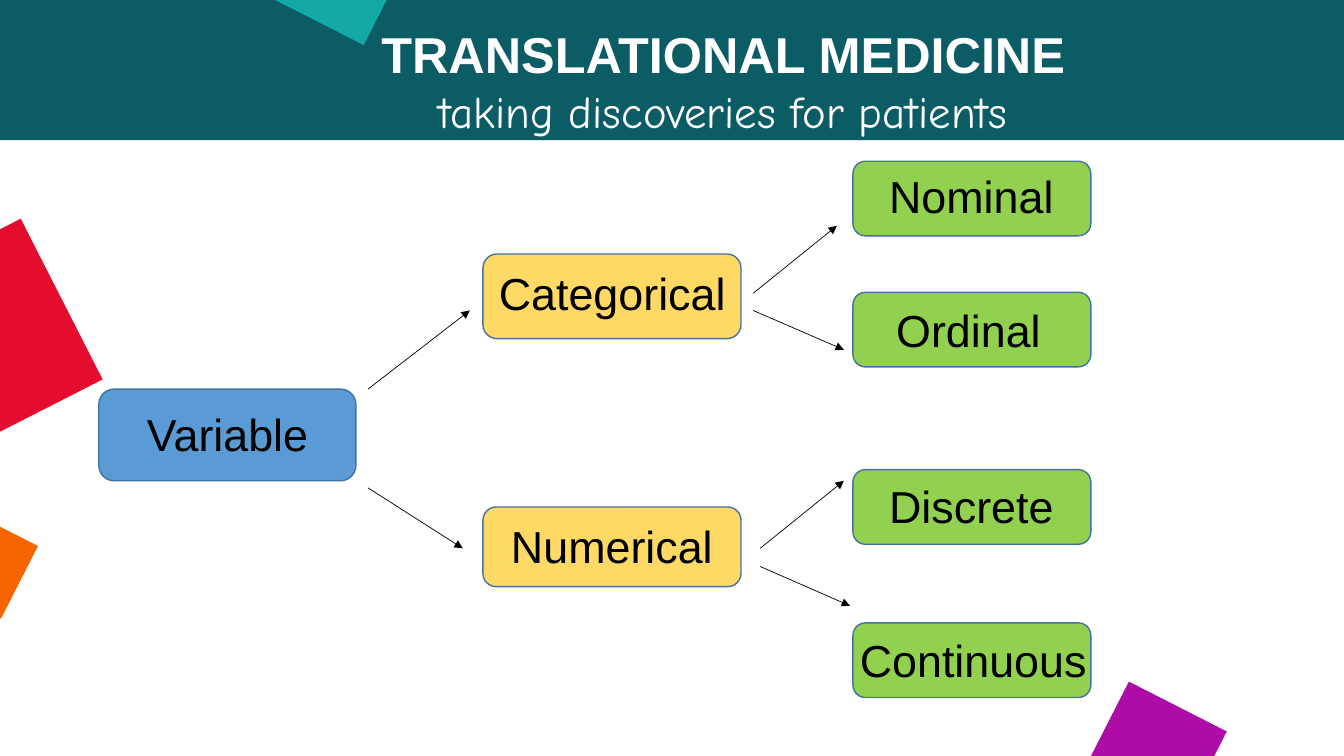
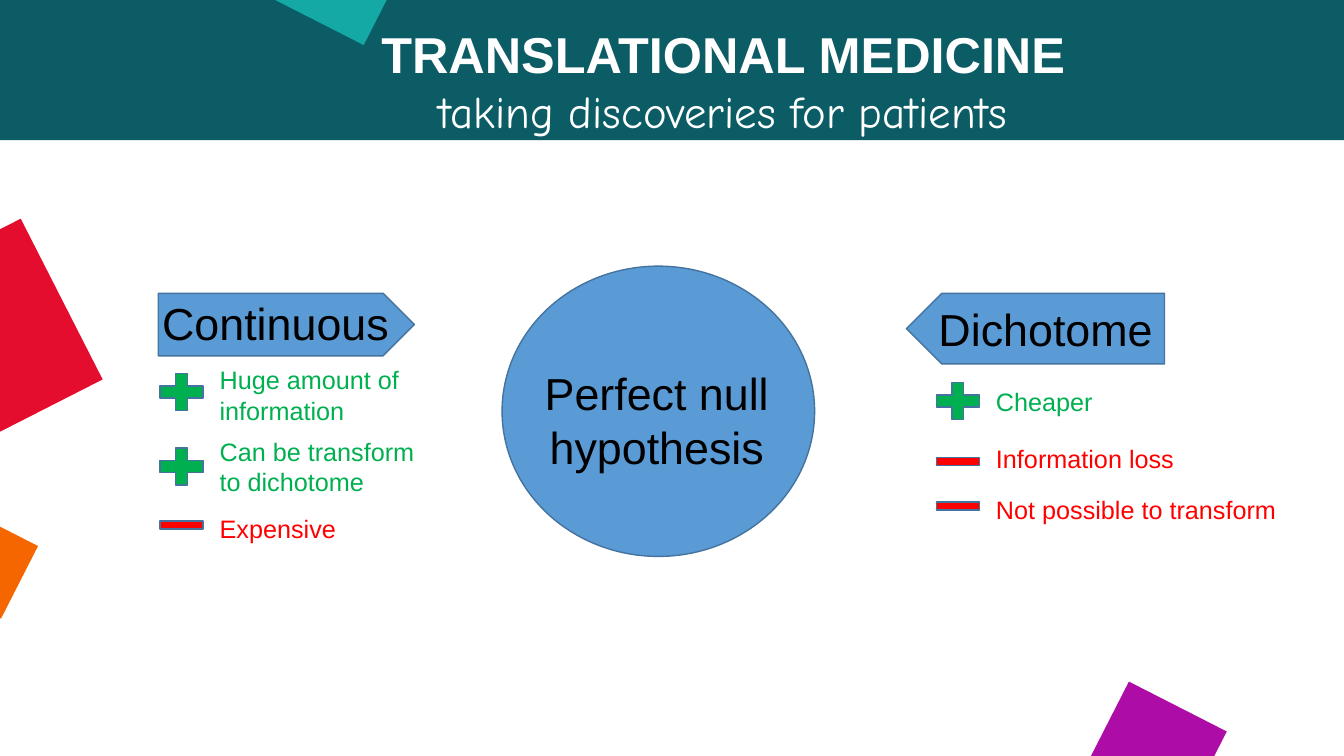
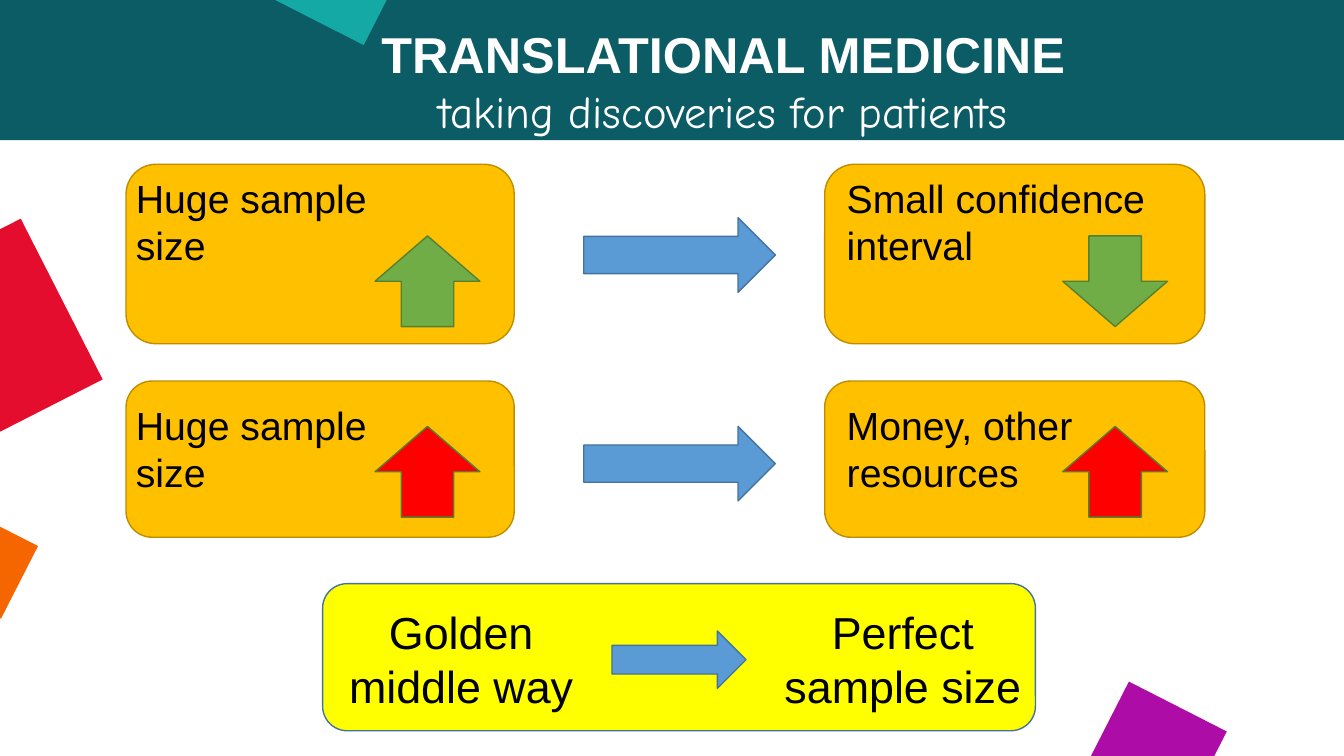
"""Build three slides on variables, hypotheses and sample size."""
from pptx import Presentation
from pptx.dml.color import RGBColor as Rgb
from pptx.enum.shapes import MSO_CONNECTOR as Link, MSO_SHAPE as Kind
from pptx.enum.text import PP_ALIGN as Align
from pptx.oxml.ns import qn
from pptx.util import Inches, Pt
from lxml.etree import SubElement

HUES = {
    "teal": "0C5C65", "aqua": "15A9A6", "crimson": "E50D2E", "purple": "AD0DA6",
    "orange": "F56600", "blue": "5B9BD5", "navy": "43739E", "sand": "FFD966",
    "lime": "92D050", "gold": "FFC000", "bronze": "BD8E00", "leaf": "70AD47",
    "moss": "538035", "yellow": "FFFF00", "red": "FF0000", "green": "00B050",
    "black": "000000", "white": "FFFFFF",
}
HUES = {name: Rgb.from_string(code) for name, code in HUES.items()}


def draw(page, kind, box, fill, edge="navy", turn=0):
    shape = page.shapes.add_shape(kind, *map(Inches, box))
    shape.shadow.inherit = False
    shape.rotation = turn
    shape.fill.solid()
    shape.fill.fore_color.rgb = HUES[fill]
    if edge:
        shape.line.color.rgb = HUES[edge]
        shape.line.width = Pt(1)
    else:
        shape.line.fill.background()
    return shape


def write(page, box, lines, hue="black", align=Align.LEFT, **style):
    frame = page.shapes.add_textbox(*map(Inches, box)).text_frame
    frame.word_wrap = True
    for i, (words, extra) in enumerate(lines):
        para = frame.add_paragraph() if i else frame.paragraphs[0]
        para.alignment = align
        run = para.add_run()
        run.text = words
        font = {"name": "Arial", "size": Pt(32), "bold": False, **style, **extra}
        for key, value in font.items():
            setattr(run.font, key, value)
        run.font.color.rgb = HUES[hue]


deck = Presentation()
deck.slide_width, deck.slide_height = Inches(13.33), Inches(7.5)
layout = deck.slide_layouts[6]
for holder in list(layout.placeholders):
    holder.element.getparent().remove(holder.element)
pages = [deck.slides.add_slide(layout) for _ in range(3)]
tree, marks, sample = pages

for box, fill, turn in [
    ((0, 0, 13.33, 1.39), "teal", 0),
    ((-1.09, 2.48, 1.8, 1.79), "crimson", 333),
    ((10.89, 6.95, 1.09, 1.09), "purple", 27),
    ((-0.61, 5.18, 0.85, 0.81), "orange", 27),
    ((2.91, -0.73, 0.98, 1.01), "aqua", 27),
]:
    layout.shapes.element.append(draw(tree, Kind.RECTANGLE, box, fill, None, turn).element)

for page in pages:
    write(page, (3.67, 0.18, 7.01, 1.2), [
        ("TRANSLATIONAL MEDICINE", {"size": Pt(36), "bold": True}),
        ("taking discoveries for patients", {"name": "Comic Neue"}),
    ], "white", Align.CENTER)

for words, box, fill, left, top, width in [
    ("Variable", (0.98, 3.86, 2.55, 0.91), "blue", 1.36, 3.99, 2.33),
    ("Categorical", (4.79, 2.52, 2.56, 0.84), "sand", 4.85, 2.59, 2.5),
    ("Numerical", (4.79, 5.03, 2.56, 0.79), "sand", 4.97, 5.1, 2.3),
    ("Nominal", (8.46, 1.6, 2.36, 0.74), "lime", 8.72, 1.62, 2.19),
    ("Ordinal", (8.46, 2.9, 2.36, 0.74), "lime", 8.79, 2.95, 2.19),
    ("Discrete", (8.46, 4.66, 2.36, 0.74), "lime", 8.72, 4.7, 2.19),
    ("Continuous", (8.46, 6.18, 2.36, 0.74), "lime", 8.43, 6.23, 2.5),
]:
    draw(tree, Kind.ROUNDED_RECTANGLE, box, fill)
    write(tree, (left, top, width, 0.64), [(words, {})])

for ends in [
    (3.65, 3.86, 4.66, 3.08), (3.65, 4.84, 4.59, 5.44),
    (7.47, 2.91, 8.3, 2.24), (7.47, 3.08, 8.37, 3.47),
    (7.54, 5.44, 8.37, 4.77), (7.54, 5.62, 8.43, 6.01),
]:
    line = tree.shapes.add_connector(Link.STRAIGHT, *map(Inches, ends))
    line.line.color.rgb = HUES["black"]
    line.line.width = Pt(0.5)
    SubElement(line.line._get_or_add_ln(), qn("a:tailEnd"), type="triangle")
    SubElement(line.element.spPr, qn("a:effectLst"))

draw(marks, Kind.PENTAGON, (1.57, 2.91, 2.54, 0.62), "blue")
draw(marks, Kind.PENTAGON, (8.99, 2.91, 2.56, 0.7), "blue", turn=180)
draw(marks, Kind.OVAL, (4.98, 2.64, 3.1, 2.88), "blue")
write(marks, (1.51, 2.88, 2.5, 0.64), [("Continuous", {})])
write(marks, (9.21, 2.94, 2.5, 0.64), [("Dichotome", {})])
write(marks, (5.09, 3.58, 2.85, 1.18), [("Perfect null hypothesis", {})], align=Align.CENTER)

PLUS = (Kind.MATH_PLUS, 0.5, "green")
MINUS = (Kind.MATH_MINUS, 0.34, "red")
for (kind, height, hue), left, top, base, width, words in [
    (PLUS, 1.51, 3.64, 3.57, 2.24, "Huge amount of information"),
    (PLUS, 1.51, 4.38, 4.28, 2.24, "Can be transform to dichotome"),
    (MINUS, 1.51, 5.04, 5.04, 2.35, "Expensive"),
    (PLUS, 9.21, 3.73, 3.78, 2.24, "Cheaper"),
    (MINUS, 9.21, 4.41, 4.35, 2.39, "Information loss"),
    (MINUS, 9.21, 4.85, 4.85, 3.06, "Not possible to transform"),
]:
    draw(marks, kind, (left, top, 0.58, height), hue)
    write(marks, (left + 0.57, base, width, 0.4), [(words, {})], hue, size=Pt(18))

for top, height, base, mid, rise, hue, effect, turn in [
    (1.63, 1.78, 1.68, 2.16, 2.34, "leaf", "Small confidence interval", 0),
    (3.78, 1.55, 3.93, 4.23, 4.23, "red", "Money, other resources", 180),
]:
    for left, width, inset, span, tip, words, spin in [
        (1.25, 3.85, 1.25, 2.54, 3.72, "Huge sample size", 180),
        (8.18, 3.77, 8.3, 3.4, 10.54, effect, turn),
    ]:
        draw(sample, Kind.ROUNDED_RECTANGLE, (left, top, width, height), "gold", "bronze")
        draw(sample, Kind.DOWN_ARROW, (tip, rise, 1.04, 0.9), hue, "moss", spin)
        write(sample, (inset, base, span, 1.04), [(words, {})], size=Pt(28))
    draw(sample, Kind.RIGHT_ARROW, (5.79, mid, 1.9, 0.74), "blue")

draw(sample, Kind.ROUNDED_RECTANGLE, (3.2, 5.79, 7.07, 1.46), "yellow")
draw(sample, Kind.RIGHT_ARROW, (6.07, 6.26, 1.33, 0.57), "blue")
for left, width, words in [(3.36, 2.43, "Golden middle way"), (7.48, 2.95, "Perfect sample size")]:
    write(sample, (left, 5.95, width, 1.18), [(words, {})], align=Align.CENTER)

deck.save("out.pptx")
